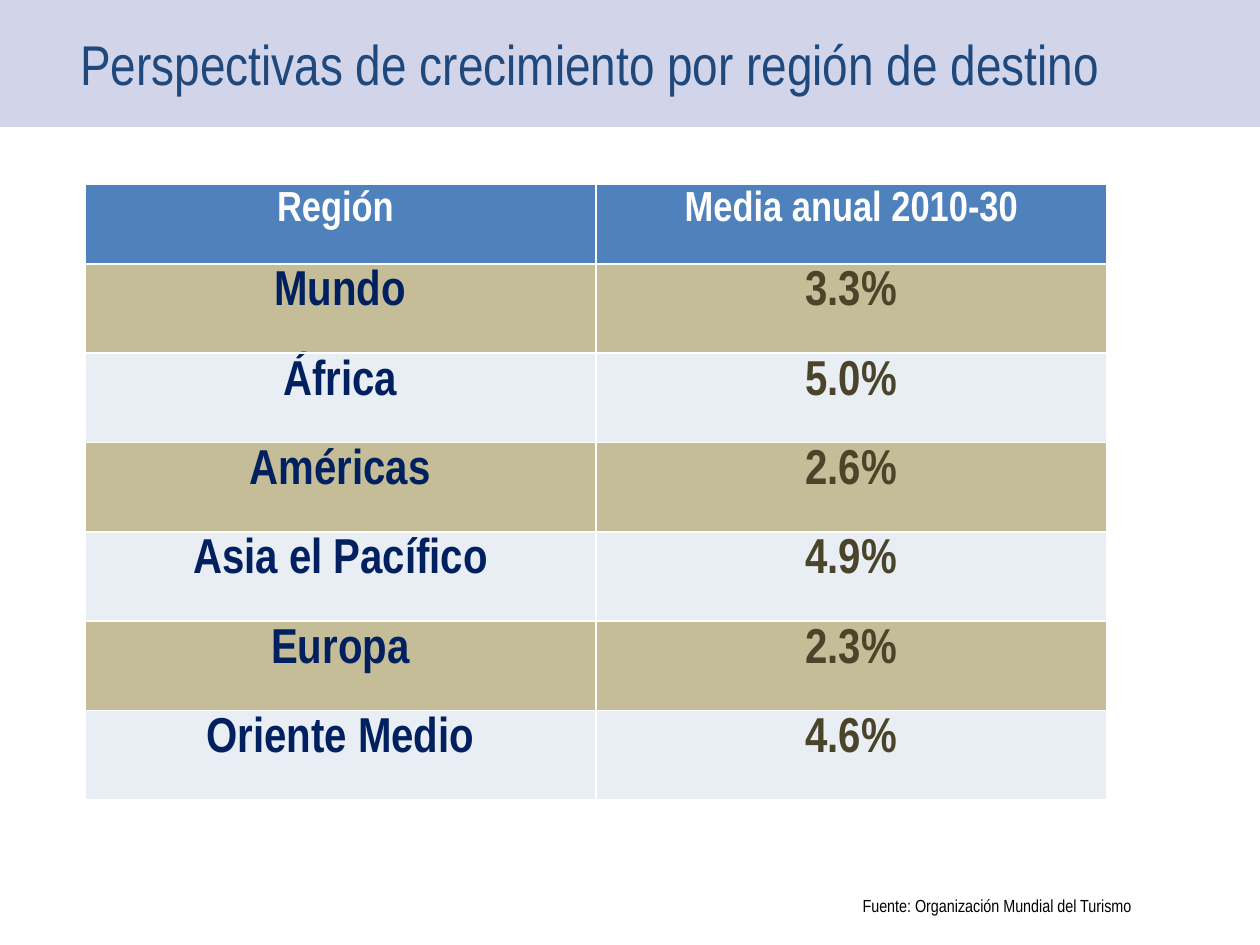
import pptx
import pptx.dml.color
import pptx.enum.shapes
import pptx.enum.text
import pptx.util

Cm, Pt = pptx.util.Cm, pptx.util.Pt
CENTER = pptx.enum.text.PP_ALIGN.CENTER
LEFT = pptx.enum.text.PP_ALIGN.LEFT

TITLE = "Perspectivas de crecimiento por región de destino"
SOURCE = "Fuente: Organización Mundial del Turismo"
ROWS = [
    ("Región ", "Media anual 2010-30"),
    ("Mundo", "3.3%"),
    ("África", "5.0%"),
    ("Américas", "2.6%"),
    ("Asia el Pacífico", "4.9%"),
    ("Europa", "2.3%"),
    ("Oriente Medio", "4.6%"),
]
HEADER_FILL, BAND_FILLS = "4F81BD", ("E9EDF4", "C4BD97")
HEADER_COLOR, COLUMN_COLORS = "FFFFFF", ("002060", "4A452A")
HEADER_HEIGHT, ROW_HEIGHT, COLUMN_WIDTH = Cm(1.6), Cm(1.8), Cm(10.3)


def rgb(value):
    return pptx.dml.color.RGBColor.from_string(value)


def paint(fill, color):
    fill.solid()
    fill.fore_color.rgb = rgb(color)


def write(tf, text, color, align=CENTER, **font):
    p = tf.paragraphs[0]
    p.alignment = align
    r = p.add_run()
    r.text = text
    r.font.color.rgb = rgb(color)
    for name, value in {"name": "Arial Narrow", **font}.items():
        setattr(r.font, name, value)


def place(sp, left, top, width, height):
    box = {"left": left, "top": top, "width": width, "height": height}
    for name, value in box.items():
        setattr(sp, name, Cm(value))


def add_header(prs, s):
    title = s.shapes.title
    place(title, 0.9, 0.46, 22, 1.63)
    title.text_frame.vertical_anchor = pptx.enum.text.MSO_ANCHOR.MIDDLE
    title.text_frame.auto_size = pptx.enum.text.MSO_AUTO_SIZE.NONE
    write(title.text_frame, TITLE, "1F497D", size=Pt(32))
    band = s.shapes.add_shape(
        pptx.enum.shapes.MSO_SHAPE.RECTANGLE, 0, 0, prs.slide_width, Cm(2.56))
    band.shadow.inherit = False
    paint(band.fill, "D2D4EA")
    band.line.fill.background()
    title.element.addprevious(band.element)


def add_growth_table(s):
    height = HEADER_HEIGHT + ROW_HEIGHT * (len(ROWS) - 1)
    table = s.shapes.add_table(
        len(ROWS), 2, Cm(1.71), Cm(3.72), COLUMN_WIDTH * 2, height).table
    for i, row in enumerate(ROWS):
        table.rows[i].height = ROW_HEIGHT if i else HEADER_HEIGHT
        for j, text in enumerate(row):
            cell = table.cell(i, j)
            paint(cell.fill, BAND_FILLS[i % 2] if i else HEADER_FILL)
            write(cell.text_frame, text,
                  COLUMN_COLORS[j] if i else HEADER_COLOR,
                  size=Pt(28 if i else 24), bold=True)


def add_source(s):
    sp = s.shapes.add_textbox(Cm(17.14), Cm(17.92), Cm(6), Cm(0.69))
    sp.text_frame.word_wrap = False
    write(sp.text_frame, SOURCE, "000000", LEFT, size=Pt(10))


def main():
    prs = pptx.Presentation()
    prs.slide_width, prs.slide_height = Cm(25.4), Cm(19.05)
    s = prs.slides.add_slide(prs.slide_layouts[5])
    add_header(prs, s)
    add_source(s)
    add_growth_table(s)
    prs.save("out.pptx")


if __name__ == "__main__":
    main()
